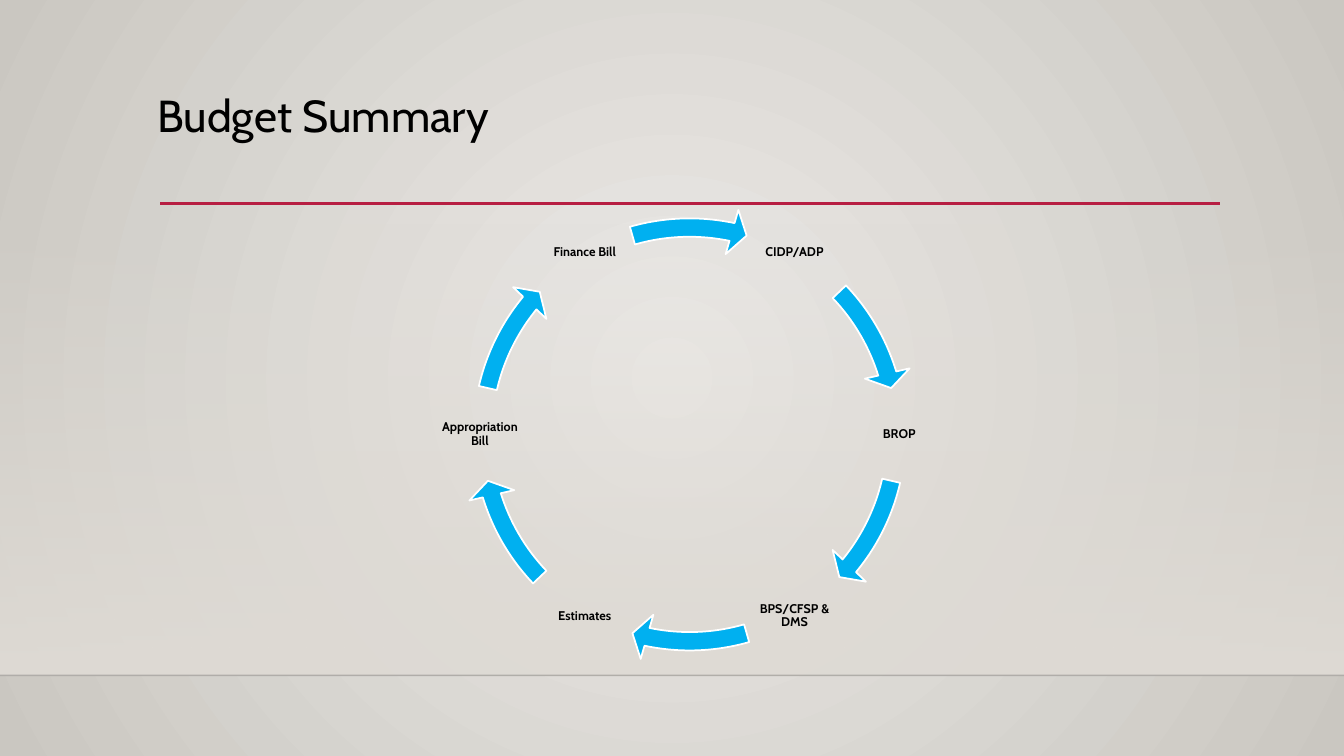
from dataclasses import dataclass
from math import cos, radians, sin

from lxml.etree import SubElement
from pptx import Presentation
from pptx.dml.color import RGBColor
from pptx.enum.shapes import MSO_CONNECTOR, MSO_SHAPE
from pptx.enum.text import MSO_ANCHOR, PP_ALIGN
from pptx.oxml.ns import qn
from pptx.util import Inches, Pt

RECT = MSO_SHAPE.RECTANGLE
ARROW = MSO_SHAPE.CIRCULAR_ARROW
STRAIGHT = MSO_CONNECTOR.STRAIGHT
MIDDLE = MSO_ANCHOR.MIDDLE
CENTER = PP_ALIGN.CENTER
LEFT = PP_ALIGN.LEFT

WIDTH, HEIGHT = Inches(13.33), Inches(7.5)
FONT = "Cabin"


def across(share: float) -> int:
    """Turn a percentage of the slide width into a length."""
    return round(WIDTH * share / 100)


def down(share: float) -> int:
    """Turn a percentage of the slide height into a length."""
    return round(HEIGHT * share / 100)


# The ring of steps
MID_X, MID_Y = across(51.31), down(57.47)
RADIUS, RING, LABEL = down(27.73), down(60.8), down(12.4)
FLOOR = 89.33


@dataclass
class Step:
    name: str
    start: float  # degrees at which the arrow after the step begins
    end: float


@dataclass
class Rule:
    left: float
    right: float
    top: float
    color: str
    weight: float
    alpha: int = 100


STEPS = [
    Step("CIDP/ADP", 316.39, 342.88),
    Step("BROP", 12.95, 39.44),
    Step("BPS/CFSP & DMS", 73.98, 101.85),
    Step("Estimates", 136.39, 162.88),
    Step("Appropriation Bill", 192.95, 219.44),
    Step("Finance Bill", 253.98, 281.85),
]
RULES = [
    Rule(0, 100, FLOOR, "000001", 1, 20),
    Rule(11.93, 90.77, 26.93, "B71E42", 2.5),
]


def paint(color, code: str) -> None:
    color.rgb = RGBColor.from_string(code)


def fade(node, share: int) -> None:
    """Set the opacity, in percent, of the first colour inside node."""
    tint = node.xpath(".//a:srgbClr")[0]
    SubElement(tint, qn("a:alpha"), val=str(share * 1000))


def blend(fill, first: str, last: str) -> None:
    fill.gradient()
    for stop, code in zip(fill.gradient_stops, (first, last)):
        paint(stop.color, code)


def add_backdrop(slide) -> None:
    blend(slide.background.fill, "ECEAE7", "CAC7C1")
    linear = slide.element.xpath(".//p:bg//a:lin")[0]
    grad = linear.getparent()
    grad.remove(linear)
    round_fill = SubElement(grad, qn("a:path"), {"path": "circle"})
    SubElement(round_fill, qn("a:fillToRect"), dict.fromkeys("ltrb", "50000"))

    top = down(29.47)
    wall = slide.shapes.add_shape(RECT, 0, top, WIDTH, down(FLOOR) - top)
    wall.shadow.inherit = False
    wall.line.fill.background()
    blend(wall.fill, "DFDBD5", "DFDBD5")
    wall.fill.gradient_angle = 270
    fade(wall.element, 0)


def add_rule(slide, rule: Rule) -> None:
    top = down(rule.top)
    line = slide.shapes.add_connector(
        STRAIGHT, across(rule.left), top, across(rule.right), top)
    paint(line.line.color, rule.color)
    line.line.width = Pt(rule.weight)
    if rule.alpha < 100:
        fade(line.element, rule.alpha)
    SubElement(line.element.spPr, qn("a:effectLst"))


def add_text(slide, text: str, box: tuple, size: int, bold=False, align=LEFT):
    frame = slide.shapes.add_textbox(*box).text_frame
    frame.word_wrap = True
    para = frame.paragraphs[0]
    para.text = text
    para.alignment = align
    para.line_spacing = 0.9
    para.font.name = FONT
    para.font.size = Pt(size)
    para.font.bold = bold
    paint(para.font.color, "000000")
    return frame


def add_step(slide, step: Step, angle: int) -> None:
    """Draw a label at the angle on the ring, and the arrow after it."""
    turn = radians(angle)
    left = round(MID_X + RADIUS * cos(turn) - LABEL / 2)
    top = round(MID_Y + RADIUS * sin(turn) - LABEL / 2)
    frame = add_text(slide, step.name, (left, top, LABEL, LABEL), 9, True, CENTER)
    frame.vertical_anchor = MIDDLE
    frame.margin_left = frame.margin_right = Inches(0.01)
    frame.margin_top = frame.margin_bottom = Inches(0.01)

    arrow = slide.shapes.add_shape(
        ARROW, MID_X - RING // 2, MID_Y - RING // 2, RING, RING)
    arrow.shadow.inherit = False
    arrow.fill.solid()
    paint(arrow.fill.fore_color, "00B0F0")
    paint(arrow.line.color, "FFFFFF")
    arrow.line.width = Pt(1.25)
    # Angles are stored as 0.6 units to the degree
    shape = (0.04, 2.5, step.end * 0.6, step.start * 0.6, 0.05)
    for index, value in enumerate(shape):
        arrow.adjustments[index] = value


def main() -> None:
    deck = Presentation()
    deck.slide_width, deck.slide_height = WIDTH, HEIGHT
    slide = deck.slides.add_slide(deck.slide_layouts[6])
    add_backdrop(slide)
    for rule in RULES:
        add_rule(slide, rule)
    title = across(10.95), down(11.73), across(78.77), down(15.33)
    add_text(slide, "Budget Summary", title, 32)
    for index, step in enumerate(STEPS):
        add_step(slide, step, 60 * index - 60)
    deck.save("out.pptx")


if __name__ == "__main__":
    main()
